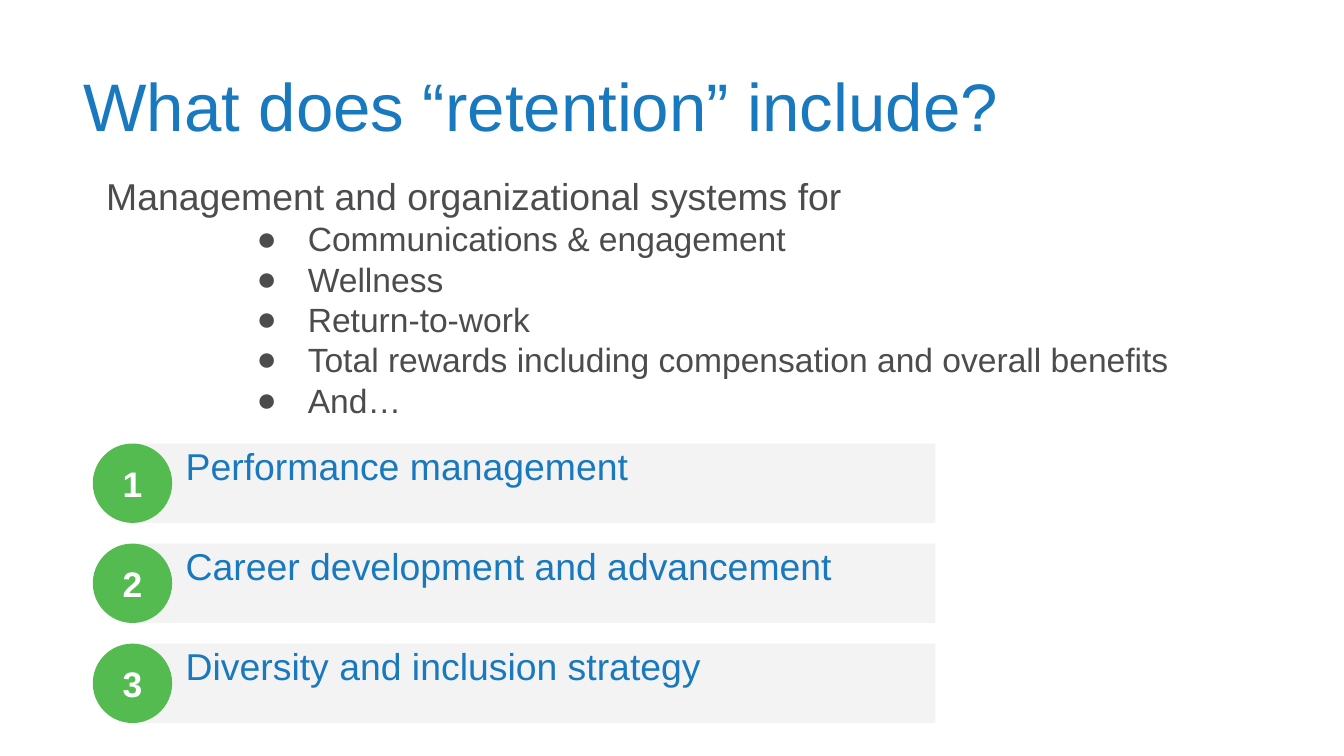
from dataclasses import dataclass

from lxml import etree
from pptx import Presentation
from pptx import util as u
from pptx.dml.color import RGBColor
from pptx.enum import shapes, text
from pptx.oxml import ns


@dataclass(frozen=True)
class Theme:
    font: str = "Arial"
    heading: str = "1979BE"
    body: str = "4C4C4E"
    badge: str = "53BB50"
    bar: str = "F3F3F3"
    inverse: str = "FFFFFF"
    title_size: int = 36
    lead_size: int = 20
    bullet_size: int = 18
    badge_size: int = 19


@dataclass(frozen=True)
class Box:
    left: float
    top: float
    width: float
    height: float

    def emu(self):
        return [u.Inches(n) for n in (self.left, self.top, self.width, self.height)]


THEME = Theme()
SLIDE = Box(0, 0, 10, 10 * 9 / 16)
TITLE = "What does “retention” include?"
LEAD = "Management and organizational systems for"
SYSTEMS = [
    "Communications & engagement",
    "Wellness",
    "Return-to-work",
    "Total rewards including compensation and overall benefits",
    "And…",
]
PRIORITIES = [
    "Performance management",
    "Career development and advancement",
    "Diversity and inclusion strategy",
]


def place(part, box):
    part.left, part.top, part.width, part.height = box.emu()


def set_frame(frame, anchor, left=0.1, right=0.1, vertical=0.05):
    frame.word_wrap = True
    frame.auto_size = text.MSO_AUTO_SIZE.NONE
    frame.vertical_anchor = anchor
    frame.margin_left, frame.margin_right = u.Inches(left), u.Inches(right)
    frame.margin_top = frame.margin_bottom = u.Inches(vertical)


def style(paragraph, size, color, bold=False, align=text.PP_ALIGN.LEFT):
    paragraph.alignment = align
    paragraph.space_before = u.Pt(0)
    for run in paragraph.runs:
        run.font.name = THEME.font
        run.font.size = u.Pt(size)
        run.font.bold = bold
        run.font.color.rgb = RGBColor.from_string(color)


def set_bullet(paragraph, symbol=None, margin=0, indent=0):
    props = paragraph._p.get_or_add_pPr()
    props.set("marL", str(u.Inches(margin)))
    props.set("indent", str(u.Inches(indent)))
    if symbol is None:
        etree.SubElement(props, ns.qn("a:buNone"))
        return
    color = etree.SubElement(props, ns.qn("a:buClr"))
    etree.SubElement(color, ns.qn("a:srgbClr"), val=THEME.body)
    etree.SubElement(props, ns.qn("a:buFont"), typeface=THEME.font)
    etree.SubElement(props, ns.qn("a:buChar"), char=symbol)


def add_title(slide, box):
    title = slide.shapes.title
    place(title, box)
    set_frame(title.text_frame, text.MSO_ANCHOR.MIDDLE)
    title.text_frame.text = TITLE
    heading = title.text_frame.paragraphs[0]
    heading.line_spacing = 0.9
    style(heading, THEME.title_size, THEME.heading)


def add_systems(slide, box):
    body = slide.placeholders[1]
    place(body, box)
    set_frame(body.text_frame, text.MSO_ANCHOR.TOP)
    body.text_frame.text = "\n".join([LEAD, *SYSTEMS])
    lead, *systems = body.text_frame.paragraphs
    set_bullet(lead)
    style(lead, THEME.lead_size, THEME.body)
    for system in systems:
        set_bullet(system, "●", 1.5, -0.38)
        style(system, THEME.bullet_size, THEME.body)


def add_filled(slide, preset, box, color):
    part = slide.shapes.add_shape(preset, *box.emu())
    part.shadow.inherit = False
    part.fill.solid()
    part.fill.fore_color.rgb = RGBColor.from_string(color)
    part.line.fill.background()
    return part


def add_priority(slide, box, number, wording):
    side = box.height
    bar_box = Box(box.left + side / 2, box.top, box.width - side / 2, side)
    add_filled(slide, shapes.MSO_SHAPE.RECTANGLE, bar_box, THEME.bar)

    badge_box = Box(box.left, box.top, side, side)
    badge = add_filled(slide, shapes.MSO_SHAPE.OVAL, badge_box, THEME.badge)
    set_frame(badge.text_frame, text.MSO_ANCHOR.MIDDLE, left=0, right=0, vertical=0)
    badge.text_frame.text = str(number)
    style(badge.text_frame.paragraphs[0], THEME.badge_size, THEME.inverse,
          bold=True, align=text.PP_ALIGN.CENTER)

    label = slide.shapes.add_textbox(*bar_box.emu())
    set_frame(label.text_frame, text.MSO_ANCHOR.TOP, left=side * 0.67, vertical=0)
    label.text_frame.text = wording
    style(label.text_frame.paragraphs[0], THEME.lead_size, THEME.heading)


def add_priorities(slide, box, gap_share=0.26):
    count = len(PRIORITIES)
    row = box.height / (count + (count - 1) * gap_share)
    pitch = row * (1 + gap_share)
    for index, wording in enumerate(PRIORITIES):
        row_box = Box(box.left, box.top + index * pitch, box.width, row)
        add_priority(slide, row_box, index + 1, wording)


def main():
    deck = Presentation()
    deck.slide_width, deck.slide_height = SLIDE.emu()[2:]
    slide = deck.slides.add_slide(deck.slide_layouts[1])
    add_title(slide, Box(0.52, 0.27, 8.62, 1.09))
    add_systems(slide, Box(0.69, 1.24, 8.62, 2.36))
    add_priorities(slide, Box(0.69, 3.3, 6.27, 2.08))
    deck.save("out.pptx")


if __name__ == "__main__":
    main()
